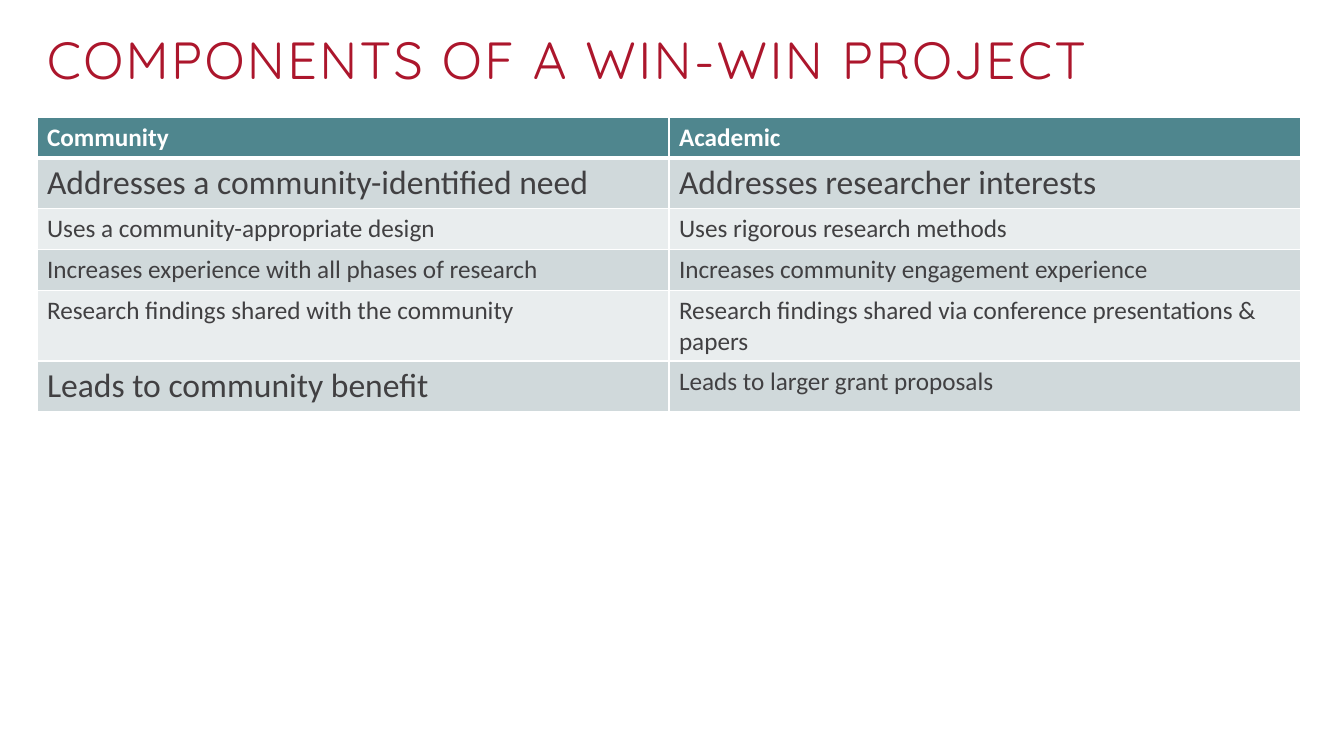
from lxml import etree
from pptx import Presentation
from pptx import util as u
from pptx.dml.color import RGBColor
from pptx.enum import text
from pptx.oxml import ns

SCALE = 914400 / 100.8


def px(length):
    return u.Emu(round(length * SCALE))


def color(value):
    return RGBColor.from_string(value)


class SlideBuilder:
    title_font = "Quicksand"
    body_font = "Calibri"
    red = "AC162C"
    teal = "4F868E"
    ink = "414042"
    white = "FFFFFF"
    bands = ("D0D9DB", "E9EDEE")

    def __init__(self, presentation):
        self.slide = presentation.slides.add_slide(presentation.slide_layouts[6])

    def add_run(self, paragraph, words, font_name, size, ink, bold=False):
        run = paragraph.add_run()
        run.text = words
        run.font.name = font_name
        run.font.size = u.Pt(size)
        run.font.bold = bold
        run.font.color.rgb = color(ink)
        return run

    def add_title(self, words, left, top, width, height):
        shape = self.slide.shapes.add_textbox(px(left), px(top), px(width), px(height))
        frame = shape.text_frame
        frame.word_wrap = True
        frame.vertical_anchor = text.MSO_ANCHOR.TOP
        run = self.add_run(frame.paragraphs[0], words, self.title_font, 37.3, self.red)
        run.font._element.set("spc", "170")

    def add_borders(self, cell, widths):
        properties = cell._tc.get_or_add_tcPr()
        for index, (side, width) in enumerate(widths.items()):
            line = etree.Element(ns.qn(f"a:{side}"), w=str(u.Pt(width)))
            fill = etree.SubElement(line, ns.qn("a:solidFill"))
            etree.SubElement(fill, ns.qn("a:srgbClr"), val=self.white)
            properties.insert(index, line)

    def add_table(self, rows, left, top, column_width, row_height):
        columns = len(rows[0])
        frame = self.slide.shapes.add_table(
            len(rows), columns, px(left), px(top),
            px(column_width * columns), px(row_height * len(rows)))
        table = frame.table
        for column in table.columns:
            column.width = px(column_width)
        for row_index, row in enumerate(rows):
            table.rows[row_index].height = px(row_height)
            header = row_index == 0
            fill = self.teal if header else self.bands[(row_index - 1) % 2]
            widths = {"lnL": 1, "lnR": 1,
                      "lnT": 3 if row_index == 1 else 1,
                      "lnB": 3 if header else 1}
            for column_index, (words, size) in enumerate(row):
                cell = table.cell(row_index, column_index)
                cell.fill.solid()
                cell.fill.fore_color.rgb = color(fill)
                self.add_borders(cell, widths)
                self.add_run(cell.text_frame.paragraphs[0], words, self.body_font,
                             size, self.white if header else self.ink, header)


def main():
    presentation = Presentation()
    presentation.slide_width = px(1344)
    presentation.slide_height = px(756)
    builder = SlideBuilder(presentation)
    builder.add_title("COMPONENTS OF A WIN-WIN PROJECT", 37, 22, 1263, 60)
    rows = [
        [("Community", 18), ("Academic", 18)],
        [("Addresses a community-identified need", 24),
         ("Addresses researcher interests", 24)],
        [("Uses a community-appropriate design", 18),
         ("Uses rigorous research methods", 18)],
        [("Increases experience with all phases of research", 18),
         ("Increases community engagement experience", 18)],
        [("Research findings shared with the community", 18),
         ("Research findings shared via conference presentations & papers", 18)],
        [("Leads to community benefit", 24),
         ("Leads to larger grant proposals", 18)],
    ]
    builder.add_table(rows, left=37, top=117, column_width=632, row_height=41)
    presentation.save("out.pptx")


if __name__ == "__main__":
    main()
